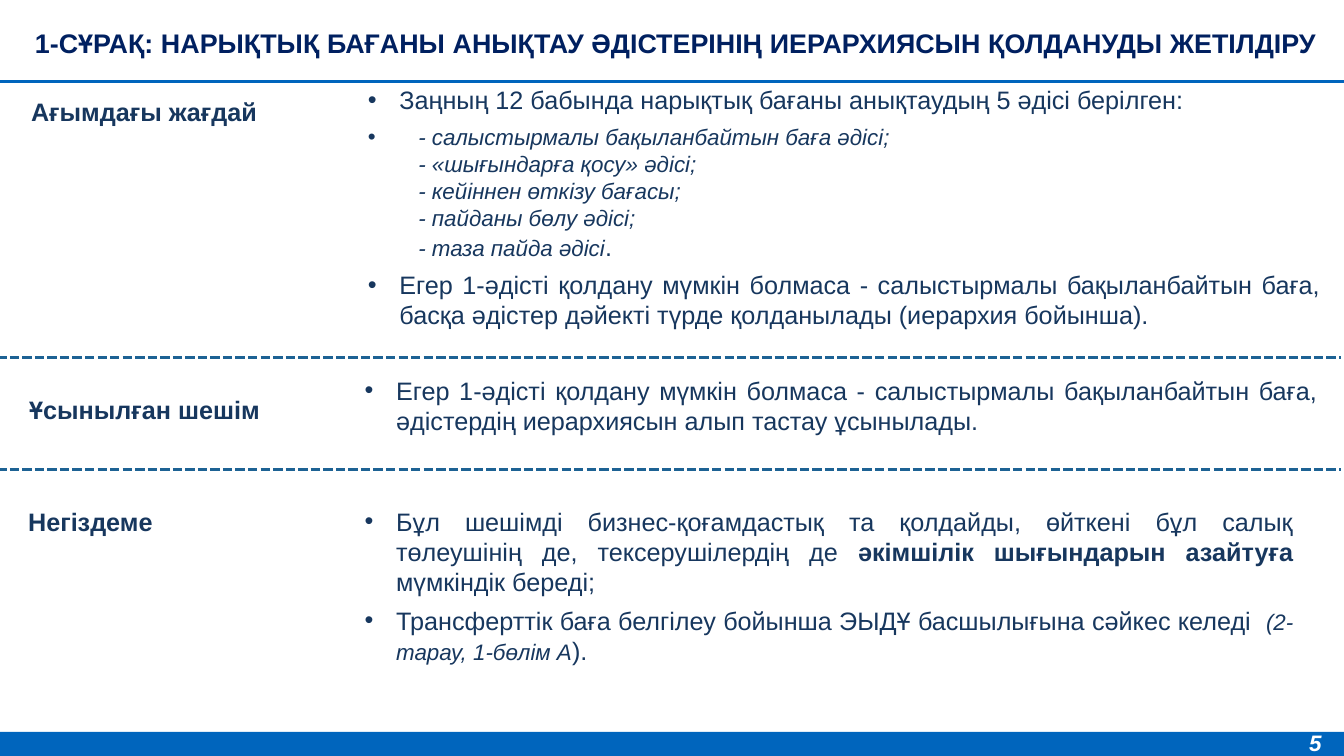
from pptx import Presentation
from pptx import util as u
from pptx.dml.color import RGBColor
from pptx.enum import dml, shapes, text
from pptx.oxml.ns import qn
from lxml import etree

BLUE = RGBColor(0x00, 0x65, 0xBD)
NAVY = RGBColor(0x00, 0x20, 0x60)
INK = RGBColor(0x17, 0x37, 0x5E)
TEAL = RGBColor(0x1D, 0x62, 0x94)
WHITE = RGBColor(0xFF, 0xFF, 0xFF)
WIDTH, HEIGHT = 960, 540
HANG = 22.5


def add_text(para, words, size=18, color=INK, bold=False, italic=False):
    span = para.add_run()
    span.text = words
    font = span.font
    font.name, font.size, font.bold, font.italic = "Arial", u.Pt(size), bold, italic
    font.color.rgb = color
    return span


def set_frame(box, left, top, width, height, anchor=text.MSO_ANCHOR.TOP):
    box.left, box.top, box.width, box.height = map(u.Pt, (left, top, width, height))
    frame = box.text_frame
    frame.word_wrap = True
    frame.auto_size = text.MSO_AUTO_SIZE.NONE
    frame.vertical_anchor = anchor
    return frame


deck = Presentation()
deck.slide_width, deck.slide_height = u.Pt(WIDTH), u.Pt(HEIGHT)
page = deck.slides.add_slide(deck.slide_layouts[1])

footer = page.shapes.add_shape(
    shapes.MSO_SHAPE.RECTANGLE, u.Pt(0), u.Pt(522.7), u.Pt(WIDTH), u.Pt(17.3))
footer.shadow.inherit = False
footer.fill.solid()
footer.fill.fore_color.rgb = BLUE
footer.line.fill.background()

for left, y, color, dashed in [
    (0, 58.5, BLUE, False),
    (-2, 255.6, TEAL, True),
    (-2, 335.5, TEAL, True),
]:
    rule = page.shapes.add_connector(
        shapes.MSO_CONNECTOR.STRAIGHT, u.Pt(left), u.Pt(y), u.Pt(left + WIDTH), u.Pt(y))
    rule.line.color.rgb = color
    rule.line.width = u.Pt(2.25)
    if dashed:
        rule.line.dash_style = dml.MSO_LINE.SQUARE_DOT
    etree.SubElement(rule._element.spPr, qn("a:effectLst"))

frame = set_frame(page.shapes.title, 7.2, 0, 950.4, 56.9, text.MSO_ANCHOR.MIDDLE)
heading = frame.paragraphs[0]
heading.alignment = text.PP_ALIGN.CENTER
span = add_text(
    heading,
    "1-сұрақ: нарықтық бағаны анықтау әдістерінің иерархиясын қолдануды жетілдіру",
    size=24, color=NAVY, bold=True)
span.font._element.set("cap", "small")

for words, left, top, width in [
    ("Ағымдағы жағдай", 15.1, 65.5, 192),
    ("Ұсынылған шешім", 13.7, 278, 192),
    ("Негіздеме", 13, 358, 141),
]:
    box = page.shapes.add_textbox(0, 0, 0, 0)
    frame = set_frame(box, left, top, width, 28.8, text.MSO_ANCHOR.MIDDLE)
    add_text(frame.paragraphs[0], words, bold=True)

method = {"size": 16, "italic": True}
current = [
    (True, 6, [("Заңның 12 бабында нарықтық бағаны анықтаудың 5 әдісі берілген:", {})]),
    (True, 6, [("\t- салыстырмалы бақыланбайтын баға әдісі;", method)]),
    (False, 0, [("\t- «шығындарға қосу» әдісі; ", method)]),
    (False, 0, [("\t- кейіннен өткізу бағасы; ", method)]),
    (False, 0, [("\t- пайданы бөлу әдісі;", method)]),
    (False, 0, [("\t- таза пайда әдісі", method), (".", {})]),
    (True, 6, [("Егер 1-әдісті қолдану мүмкін болмаса - салыстырмалы бақыланбайтын баға, "
                "басқа әдістер дәйекті түрде қолданылады (иерархия бойынша).", {})]),
]
proposed = [
    (True, 0, [("Егер 1-әдісті қолдану мүмкін болмаса - салыстырмалы бақыланбайтын баға, "
                "әдістердің иерархиясын алып тастау ұсынылады.", {})]),
]
reasons = [
    (True, 6, [("Бұл шешімді бизнес-қоғамдастық та қолдайды, өйткені бұл салық "
                "төлеушінің де, тексерушілердің де ", {}),
               ("әкімшілік шығындарын азайтуға ", {"bold": True}),
               ("мүмкіндік береді;", {})]),
    (True, 6, [("Трансферттік баға белгілеу бойынша ЭЫДҰ басшылығына сәйкес келеді  ", {}),
               ("(2-тарау, 1-бөлім А", method), (").", {})]),
]

for box, place, items in [
    (page.placeholders[1], (255.6, 56.9, 694.8, 184.3), current),
    (page.shapes.add_textbox(0, 0, 0, 0), (253.4, 264.2, 694.8, 51.1), proposed),
    (page.shapes.add_textbox(0, 0, 0, 0), (253.4, 357.8, 677.5, 122.4), reasons),
]:
    frame = set_frame(box, *place)
    for index, (bulleted, gap, spans) in enumerate(items):
        para = frame.add_paragraph() if index else frame.paragraphs[0]
        para.alignment = text.PP_ALIGN.JUSTIFY
        para.space_before = u.Pt(gap)
        layout = para._p.get_or_add_pPr()
        layout.set("marL", str(u.Pt(HANG if bulleted else 0)))
        layout.set("indent", str(u.Pt(-HANG if bulleted else 0)))
        if bulleted:
            etree.SubElement(layout, qn("a:buFont"), typeface="Arial")
            etree.SubElement(layout, qn("a:buChar"), char="•")
        else:
            etree.SubElement(layout, qn("a:buNone"))
        for words, style in spans:
            add_text(para, words, **style)

box = page.shapes.add_textbox(0, 0, 0, 0)
frame = set_frame(box, 928.1, 517, 85, 26.6)
add_text(frame.paragraphs[0], "5", size=16, color=WHITE, bold=True, italic=True)

deck.save("out.pptx")
